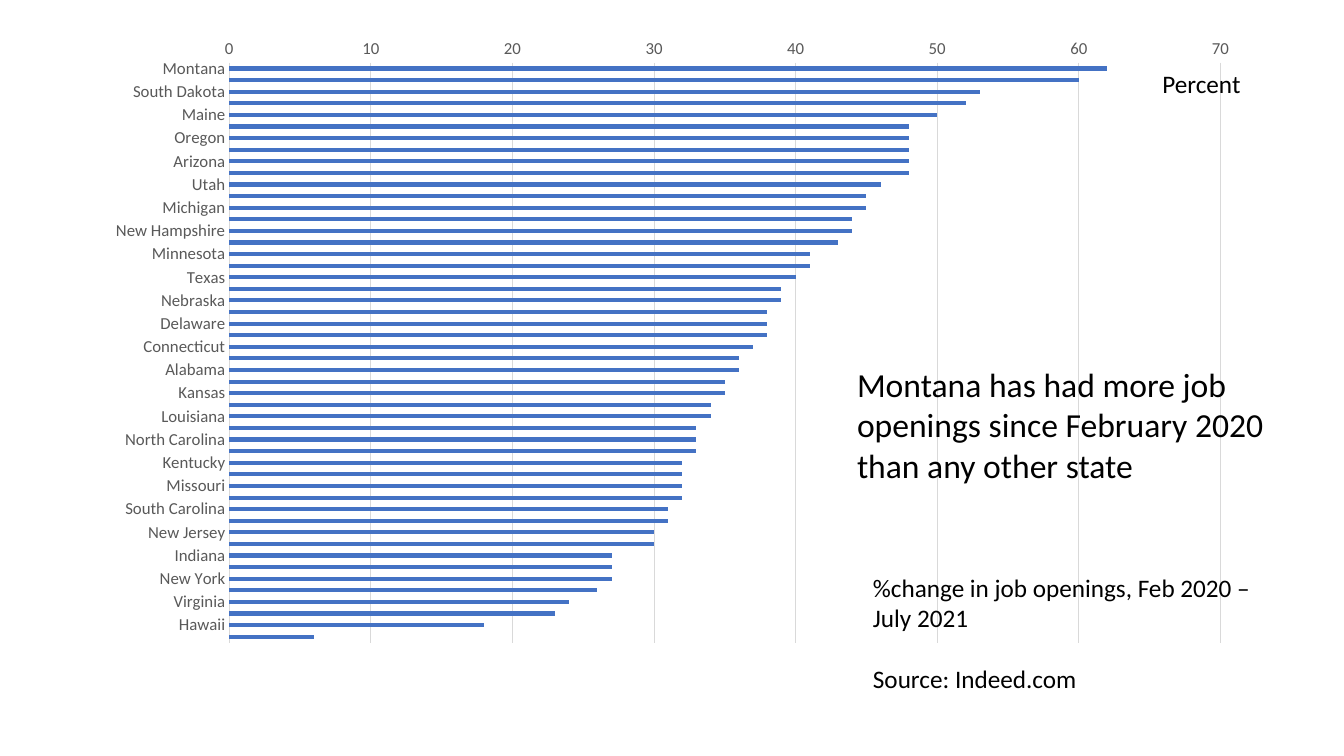
"""Build a slide that ranks the states by growth in job openings."""
from pptx import Presentation
from pptx.chart.data import CategoryChartData
from pptx.dml.color import RGBColor
from pptx.enum.chart import XL_CHART_TYPE, XL_TICK_MARK
from pptx.enum.text import MSO_ANCHOR, PP_ALIGN
from pptx.util import Inches, Pt

BARS = XL_CHART_TYPE.BAR_CLUSTERED
NO_TICKS = XL_TICK_MARK.NONE
TOP = MSO_ANCHOR.TOP
LEFT = PP_ALIGN.LEFT
TITLE_ONLY = 5

THEME = {
    "font": "Calibri",
    "text": RGBColor.from_string("000000"),
    "axis": RGBColor.from_string("595959"),
    "grid": RGBColor.from_string("D9D9D9"),
    "bar": RGBColor.from_string("4472C4"),
    "headline_size": Pt(24),
    "note_size": Pt(18),
    "axis_size": Pt(12),
    "hairline": Pt(0.75),
}

OPENINGS = {
    "Montana": 62, "Idaho": 60, "South Dakota": 53, "Nevada": 52, "Maine": 50,
    "Georgia": 48, "Oregon": 48, "Vermont": 48, "Arizona": 48, "Rhode Island": 48,
    "Utah": 46, "Tennessee": 45, "Michigan": 45, "Florida": 44, "New Hampshire": 44,
    "Iowa": 43, "Minnesota": 41, "North Dakota": 41, "Texas": 40, "Mississippi": 39,
    "Nebraska": 39, "Alaska": 38, "Delaware": 38, "Oklahoma": 38, "Connecticut": 37,
    "Pennsylvania": 36, "Alabama": 36, "Wisconsin": 35, "Kansas": 35, "Arkansas": 34,
    "Louisiana": 34, "West Virginia": 33, "North Carolina": 33, "Ohio": 33,
    "Kentucky": 32, "California": 32, "Missouri": 32, "Illinois": 32,
    "South Carolina": 31, "New Mexico": 31, "New Jersey": 30, "Wyoming": 30,
    "Indiana": 27, "Massachusetts": 27, "New York": 27, "Washington": 26,
    "Virginia": 24, "Maryland": 23, "Hawaii": 18, "District of Columbia": 6,
}

deck = Presentation()
deck.slide_width, deck.slide_height = Inches(13.33), Inches(7.5)
slide = deck.slides.add_slide(deck.slide_layouts[TITLE_ONLY])


def write(holder, *lines, size, gap=0):
    """Fill a shape with left-aligned paragraphs, set apart by a gap in points."""
    frame = holder.text_frame
    frame.word_wrap = True
    frame.vertical_anchor = TOP
    for number, line in enumerate(lines):
        paragraph = frame.add_paragraph() if number else frame.paragraphs[0]
        paragraph.text = line
        paragraph.alignment = LEFT
        paragraph.space_before = Pt(gap if number else 0)
        paragraph.font.name = THEME["font"]
        paragraph.font.size = size
        paragraph.font.color.rgb = THEME["text"]


ranking = CategoryChartData(number_format="0")
ranking.categories = list(OPENINGS)
ranking.add_series("Series 1", list(OPENINGS.values()))
ranking_frame = slide.shapes.add_chart(
    BARS, Inches(0.92), Inches(0.26), Inches(11.5), Inches(6.24), ranking)
chart = ranking_frame.chart
chart.has_legend = False
chart.has_title = False
chart.font.name = THEME["font"]
chart.font.size = THEME["axis_size"]
chart.font.color.rgb = THEME["axis"]

states, percent = chart.category_axis, chart.value_axis
for axis in (states, percent):
    axis.major_tick_mark = NO_TICKS
    axis.minor_tick_mark = NO_TICKS
    axis.tick_labels.font.name = THEME["font"]
    axis.tick_labels.font.size = THEME["axis_size"]
    axis.tick_labels.font.color.rgb = THEME["axis"]
states.reverse_order = True
percent.minimum_scale, percent.maximum_scale, percent.major_unit = 0, 70, 10
percent.format.line.fill.background()
for rule in (states.format.line, percent.major_gridlines.format.line):
    rule.color.rgb = THEME["grid"]
    rule.width = THEME["hairline"]

plot = chart.plots[0]
plot.gap_width = 182
plot.vary_by_categories = False
plot.series[0].format.fill.solid()
plot.series[0].format.fill.fore_color.rgb = THEME["bar"]

headline = slide.shapes.title
headline.left, headline.top = Inches(8.4), Inches(3.56)
headline.width, headline.height = Inches(4.83), Inches(1.31)
headline._element.addprevious(ranking_frame._element)
write(headline, "Montana has had more job openings since February 2020 than any other state",
      size=THEME["headline_size"])

source_note = slide.shapes.add_textbox(Inches(8.56), Inches(5.63), Inches(4.26), Inches(1.31))
write(source_note, "%change in job openings, Feb 2020 – July 2021", "Source: Indeed.com",
      size=THEME["note_size"], gap=22)

unit_label = slide.shapes.add_textbox(Inches(11.43), Inches(0.63), Inches(1.49), Inches(0.4))
write(unit_label, "Percent", size=THEME["note_size"])

deck.save("out.pptx")
